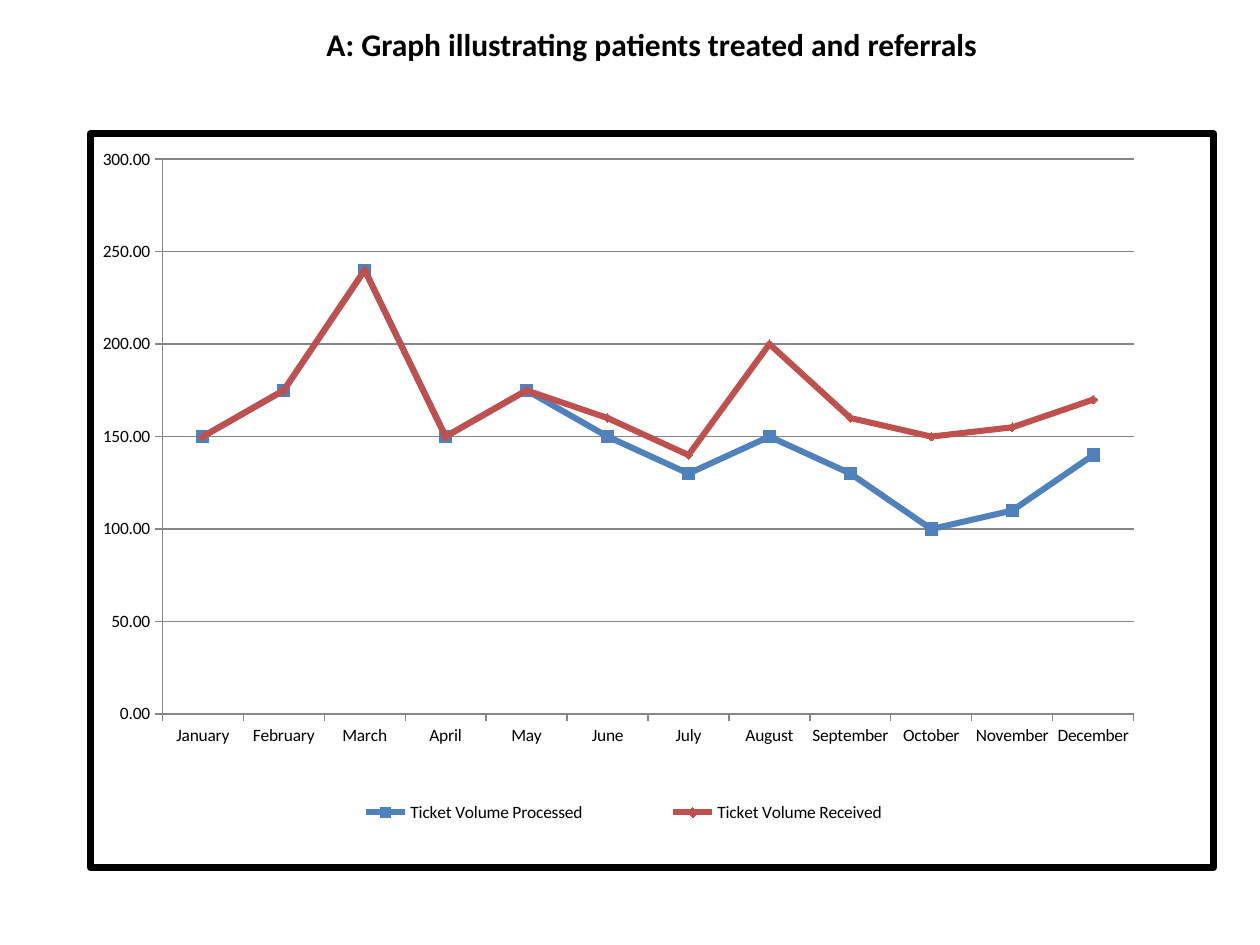
from lxml.etree import SubElement
from pptx import Presentation
from pptx.chart.data import CategoryChartData
from pptx.dml.color import RGBColor
from pptx.enum.chart import XL_CHART_TYPE, XL_LEGEND_POSITION, XL_MARKER_STYLE, XL_TICK_MARK
from pptx.enum.text import MSO_AUTO_SIZE, PP_ALIGN
from pptx.oxml import parse_xml
from pptx.oxml.ns import nsdecls, qn
from pptx.util import Emu, Pt

MONTHS = ["January", "February", "March", "April", "May", "June", "July",
          "August", "September", "October", "November", "December"]
SERIES = [
    ("Ticket Volume Processed", "4F81BD", XL_MARKER_STYLE.SQUARE, 7,
     [150, 175, 240, 150, 175, 150, 130, 150, 130, 100, 110, 140]),
    ("Ticket Volume Received", "C0504D", XL_MARKER_STYLE.DIAMOND, 5,
     [150, 175, 240, 150, 175, 160, 140, 200, 160, 150, 155, 170]),
]


def px(n):
    """Turn pixels into EMU."""
    return Emu(round(n * 914400 / 126))


def color(value):
    """Turn a hex string into a colour."""
    return RGBColor.from_string(value)


def style_line(line, value, width):
    """Set the colour and point width of a line."""
    line.color.rgb = color(value)
    line.width = Pt(width)


def set_layout(parent, index, box, inner=False):
    """Place a chart part by fractions of the chart area."""
    for old in parent.findall(qn("c:layout")):
        parent.remove(old)
    layout = parse_xml(f"<c:layout {nsdecls('c')}/>")
    manual = SubElement(layout, qn("c:manualLayout"))
    settings = [("layoutTarget", "inner")] if inner else []
    settings += [("xMode", "edge"), ("yMode", "edge")]
    settings += zip("xywh", box)
    for name, value in settings:
        SubElement(manual, qn(f"c:{name}")).set("val", str(value))
    parent.insert(index, layout)


def set_frame(chart):
    """Give the chart area a white fill and a thick black border."""
    chart._chartSpace.find(qn("c:chart")).addnext(parse_xml(
        f"<c:spPr {nsdecls('c', 'a')}>"
        '<a:solidFill><a:srgbClr val="FFFFFF"/></a:solidFill>'
        '<a:ln w="50800"><a:solidFill><a:srgbClr val="000000"/></a:solidFill>'
        "<a:round/></a:ln></c:spPr>"))


def add_title(s, x, y, w, h):
    """Add the centred slide title."""
    tf = s.shapes.add_textbox(px(x), px(y), px(w), px(h)).text_frame
    tf.word_wrap = True
    tf.auto_size = MSO_AUTO_SIZE.SHAPE_TO_FIT_TEXT
    p = tf.paragraphs[0]
    p.alignment = PP_ALIGN.CENTER
    r = p.add_run()
    r.text = "A: Graph illustrating patients treated and referrals"
    r.font.name, r.font.size, r.font.bold = "Calibri", Pt(18), True
    r.font.color.rgb = color("000000")


def add_ticket_chart(s, x, y, w, h):
    """Add the framed line chart of monthly ticket volumes."""
    data = CategoryChartData(number_format="0.00")
    data.categories = MONTHS
    for name, _, _, _, values in SERIES:
        data.add_series(name, values)
    chart = s.shapes.add_chart(XL_CHART_TYPE.LINE_MARKERS, px(x), px(y),
                               px(w), px(h), data).chart
    chart.has_title = False
    chart.font.name, chart.font.size = "Calibri", Pt(10)
    chart.font.color.rgb = color("000000")
    set_frame(chart)

    plot = chart.plots[0]
    plot.vary_by_categories = False
    for line, (_, tint, marker, size, _) in zip(plot.series, SERIES):
        line.smooth = False
        style_line(line.format.line, tint, 3.5)
        line.marker.style, line.marker.size = marker, size
        line.marker.format.fill.solid()
        line.marker.format.fill.fore_color.rgb = color(tint)
        style_line(line.marker.format.line, tint, 0.75)

    value_axis = chart.value_axis
    value_axis.minimum_scale, value_axis.maximum_scale = 0, 300
    value_axis.major_unit = 50
    value_axis.has_major_gridlines = True
    value_axis.tick_labels.number_format = "0.00"
    value_axis.tick_labels.number_format_is_linked = False
    style_line(value_axis.major_gridlines.format.line, "868686", 0.75)
    for axis in (value_axis, chart.category_axis):
        axis.major_tick_mark = XL_TICK_MARK.OUTSIDE
        axis.minor_tick_mark = XL_TICK_MARK.NONE
        style_line(axis.format.line, "868686", 0.75)

    chart.has_legend = True
    chart.legend.position = XL_LEGEND_POSITION.RIGHT
    chart.legend.include_in_layout = False
    set_layout(chart.legend._element, 1, (0.17, 0.89, 0.61, 0.07))
    plot_area = chart._chartSpace.chart.plotArea
    set_layout(plot_area, 0, (0.064, 0.035, 0.865, 0.756), inner=True)


def main():
    """Build and save the slide."""
    prs = Presentation()
    prs.slide_width, prs.slide_height = px(1260), px(945)
    s = prs.slides.add_slide(prs.slide_layouts[6])
    add_ticket_chart(s, 87, 130, 1130, 741)
    add_title(s, 87, 19, 1130, 53)
    prs.save("out.pptx")


if __name__ == "__main__":
    main()
